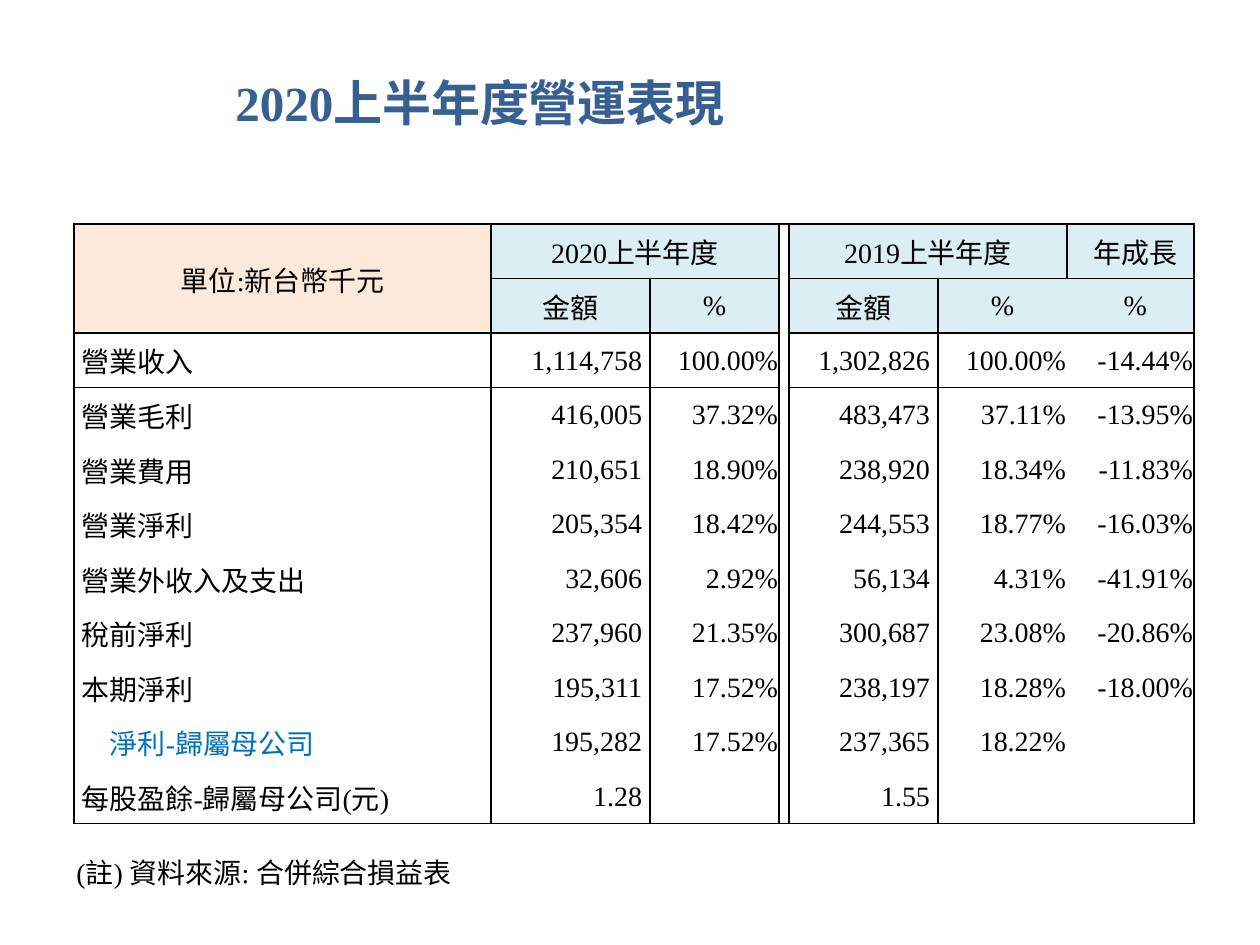
import pptx
import pptx.util
import pptx.dml.color
import pptx.enum.text
import lxml.etree

PX = 914400 / 126
LINE_WIDTH = 12700
FONT = "Times New Roman"
BLACK, TITLE_BLUE, NOTE_BLUE = "000000", "376092", "0070C0"
PEACH, PALE_BLUE = "FDE9D9", "DBEEF3"
NO_GRID_STYLE = "{2D5ABB26-0587-4C30-8999-92F81FD0307C}"
LEFT = pptx.enum.text.PP_ALIGN.LEFT
CENTER = pptx.enum.text.PP_ALIGN.CENTER
RIGHT = pptx.enum.text.PP_ALIGN.RIGHT


def px(length):
    return pptx.util.Emu(round(length * PX))


def write(frame, text, size=16, color=BLACK, bold=False, align=LEFT):
    paragraph = frame.paragraphs[0]
    paragraph.alignment = align
    run = paragraph.add_run()
    run.text = text
    run.font.name = FONT
    run.font.size = pptx.util.Pt(size)
    run.font.bold = bold
    run.font.color.rgb = pptx.dml.color.RGBColor.from_string(color)


prs = pptx.Presentation()
prs.slide_width, prs.slide_height = px(1260), px(945)
slide = prs.slides.add_slide(prs.slide_layouts[6])

# Title and source note
for x, y, width, height, text, size, color, bold in [
    (223, 66, 536, 72, "2020上半年度營運表現", 28, TITLE_BLUE, True),
    (64, 849, 406, 47, "(註) 資料來源: 合併綜合損益表", 16, BLACK, False),
]:
    frame = slide.shapes.add_textbox(px(x), px(y), px(width), px(height)).text_frame
    frame.word_wrap = True
    write(frame, text, size, color, bold)

# Columns: label | 2020 amount, % | gap | 2019 amount, %, spacer, growth
headers = [
    ["單位:新台幣千元", "2020上半年度", "", "", "2019上半年度", "", "", "年成長"],
    ["", "金額", "%", "", "金額", "%", "", "%"],
]
results = [
    ("營業收入", "1,114,758", "100.00%", "1,302,826", "100.00%", "-14.44%"),
    ("營業毛利", "416,005", "37.32%", "483,473", "37.11%", "-13.95%"),
    ("營業費用", "210,651", "18.90%", "238,920", "18.34%", "-11.83%"),
    ("營業淨利", "205,354", "18.42%", "244,553", "18.77%", "-16.03%"),
    ("營業外收入及支出", "32,606", "2.92%", "56,134", "4.31%", "-41.91%"),
    ("稅前淨利", "237,960", "21.35%", "300,687", "23.08%", "-20.86%"),
    ("本期淨利", "195,311", "17.52%", "238,197", "18.28%", "-18.00%"),
    ("淨利-歸屬母公司", "195,282", "17.52%", "237,365", "18.22%", ""),
    ("每股盈餘-歸屬母公司(元)", "1.28", "", "1.55", "", ""),
]
rows = headers + [[*r[:3], "", *r[3:5], "", r[5]] for r in results]
column_widths = [417, 159, 129, 10, 149, 129, 10, 117]
LABEL, GAP, LAST_COLUMN = 0, 3, 7
AMOUNTS = (1, 4)
SUB_ITEM_ROW, LAST_ROW = 9, len(rows) - 1
TABLE_HEIGHT = 600

table = slide.shapes.add_table(
    len(rows), len(column_widths), px(74), px(224),
    px(sum(column_widths)), px(TABLE_HEIGHT)).table
table.first_row = table.horz_banding = False
table._tbl.tblPr[0].text = NO_GRID_STYLE
for column, width in zip(table.columns, column_widths):
    column.width = px(width)
for row in table.rows:
    row.height = px(TABLE_HEIGHT / len(rows))

table.cell(0, LABEL).merge(table.cell(1, LABEL))
for first in AMOUNTS:
    table.cell(0, first).merge(table.cell(0, first + 1))

for r, values in enumerate(rows):
    is_header = r < len(headers)
    for c, value in enumerate(values):
        cell = table.cell(r, c)
        cell.vertical_anchor = pptx.enum.text.MSO_ANCHOR.MIDDLE
        cell.margin_left = cell.margin_right = cell.margin_top = px(1)
        cell.margin_bottom = 0

        ruled = c != GAP and not (c == LABEL and r == 1)
        edges = {
            "lnL": c in (LABEL, 1, GAP, 4),
            "lnR": c in (LABEL, 2, GAP, LAST_COLUMN),
            "lnT": r == 0 or (ruled and r <= 2),
            "lnB": r == LAST_ROW or (c != GAP and is_header),
        }
        for tag, shown in edges.items():
            if shown:
                props = cell._tc.get_or_add_tcPr()
                line = lxml.etree.SubElement(
                    props, pptx.oxml.ns.qn("a:" + tag), w=str(LINE_WIDTH))
                solid = lxml.etree.SubElement(line, pptx.oxml.ns.qn("a:solidFill"))
                lxml.etree.SubElement(solid, pptx.oxml.ns.qn("a:srgbClr"), val=BLACK)

        if is_header and c != GAP:
            cell.fill.solid()
            cell.fill.fore_color.rgb = pptx.dml.color.RGBColor.from_string(
                PEACH if c == LABEL else PALE_BLUE)
        else:
            cell.fill.background()

        color, align = BLACK, RIGHT
        if is_header:
            align = CENTER
        elif c == LABEL:
            align = LEFT
            cell.margin_left = px(8)
            if r == SUB_ITEM_ROW:
                cell.margin_left = px(36)
                color = NOTE_BLUE
        elif c in AMOUNTS:
            cell.margin_right = px(8)
        if value:
            write(cell.text_frame, value, color=color, align=align)

prs.save("out.pptx")
